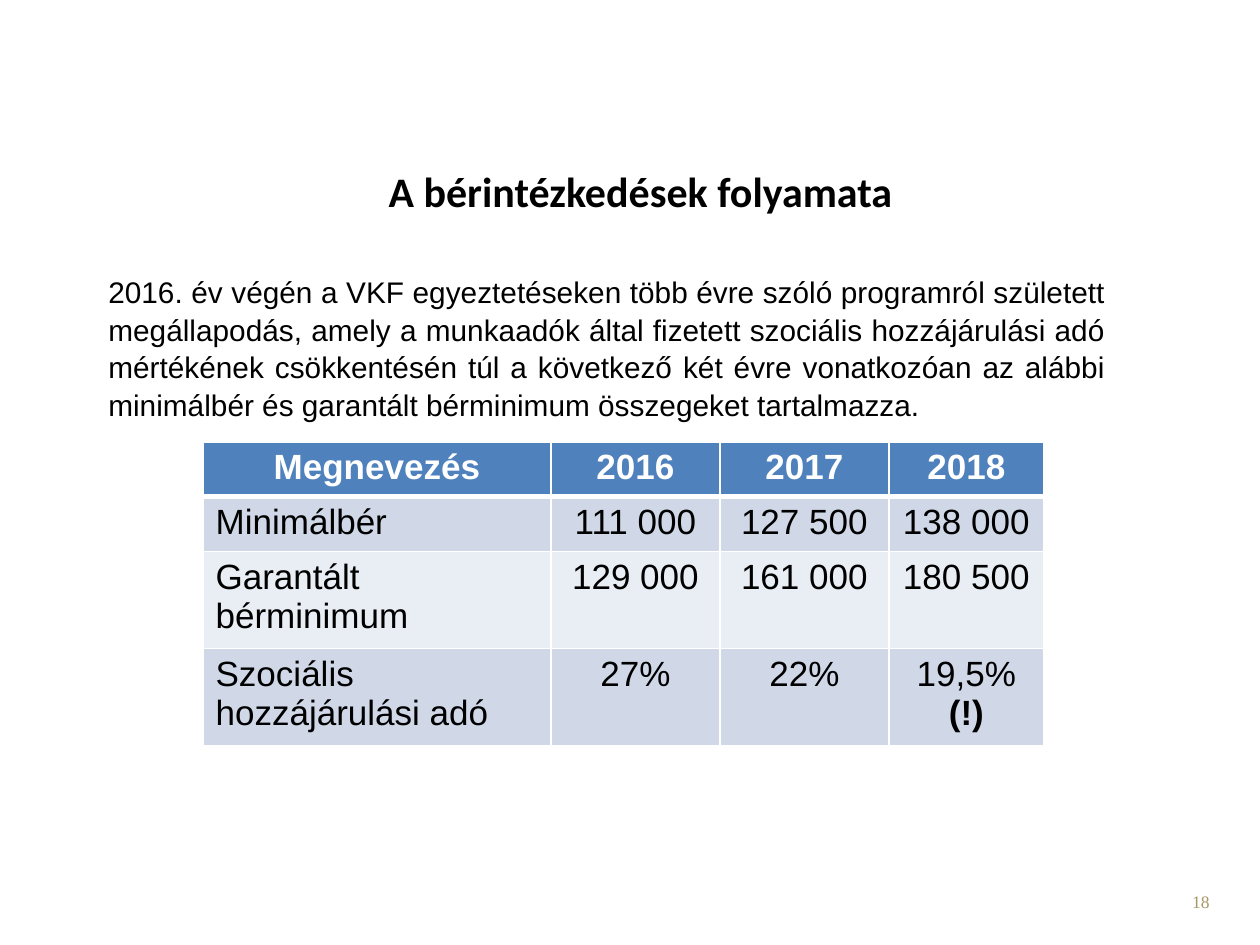
from dataclasses import dataclass

from lxml import etree
from pptx import Presentation
from pptx import util as u
from pptx.dml.color import RGBColor
from pptx.enum import text
from pptx.oxml import ns

EMU_PER_PX = 914400 / 126


@dataclass(frozen=True)
class Theme:
    ink: str = "000000"
    paper: str = "FFFFFF"
    header: str = "4F81BD"
    bands: tuple[str, str] = ("D0D8E8", "E9EDF4")
    number: str = "A69765"
    title_font: str = "Calibri"
    body_font: str = "Arial"
    number_font: str = "Times New Roman"
    title_size: int = 24
    body_size: int = 17
    table_size: int = 20
    number_size: int = 10


@dataclass(frozen=True)
class Style:
    font: str
    size: int
    color: str
    align: text.PP_ALIGN
    bold: bool = False


@dataclass(frozen=True)
class Box:
    left: int
    top: int
    width: int
    height: int

    def emu(self) -> tuple[u.Emu, ...]:
        return tuple(map(px, (self.left, self.top, self.width, self.height)))


@dataclass(frozen=True)
class WageRow:
    label: str
    values: tuple[str, str, str]
    height: int
    mark: str = ""


THEME = Theme()
ALIGN = text.PP_ALIGN
COLUMNS = (348, 169, 169, 155)
WAGE_ROWS = (
    WageRow("Megnevezés", ("2016", "2017", "2018"), 54),
    WageRow("Minimálbér", ("111 000", "127 500", "138 000"), 54),
    WageRow("Garantált bérminimum", ("129 000", "161 000", "180 500"), 97),
    WageRow("Szociális hozzájárulási adó", ("27%", "22%", "19,5% "), 97, "(!)"),
)
AGREEMENT = (
    "2016. év végén a VKF egyeztetéseken több évre szóló programról született "
    "megállapodás, amely a munkaadók által fizetett szociális hozzájárulási adó "
    "mértékének csökkentésén túl a következő két évre vonatkozóan az alábbi "
    "minimálbér és garantált bérminimum összegeket tartalmazza."
)


def px(length: int) -> u.Emu:
    return u.Emu(round(length * EMU_PER_PX))


def add_run(paragraph, wording: str, style: Style, bold: bool = False) -> None:
    paragraph.alignment = style.align
    run = paragraph.add_run()
    run.text = wording
    run.font.name = style.font
    run.font.size = u.Pt(style.size)
    run.font.bold = style.bold or bold
    run.font.color.rgb = RGBColor.from_string(style.color)


def add_note(slide, box: Box, wording: str, style: Style):
    frame = slide.shapes.add_textbox(*box.emu()).text_frame
    frame.word_wrap = True
    add_run(frame.paragraphs[0], wording, style)
    return frame.paragraphs[0]


def add_borders(cell, top: int, bottom: int) -> None:
    properties = cell._tc.get_or_add_tcPr()
    widths = {"a:lnL": 1, "a:lnR": 1, "a:lnT": top, "a:lnB": bottom}
    for position, (side, width) in enumerate(widths.items()):
        line = etree.Element(ns.qn(side), w=str(u.Pt(width)))
        fill = etree.SubElement(line, ns.qn("a:solidFill"))
        etree.SubElement(fill, ns.qn("a:srgbClr"), val=THEME.paper)
        properties.insert(position, line)


def add_wage_table(slide, left: int, top: int) -> None:
    box = Box(left, top, sum(COLUMNS), sum(row.height for row in WAGE_ROWS))
    table = slide.shapes.add_table(len(WAGE_ROWS), len(COLUMNS), *box.emu()).table
    for column, width in zip(table.columns, COLUMNS):
        column.width = px(width)
    for index, wage in enumerate(WAGE_ROWS):
        table.rows[index].height = px(wage.height)
        is_header = index == 0
        fill = THEME.header if is_header else THEME.bands[(index - 1) % 2]
        color = THEME.paper if is_header else THEME.ink
        for place, wording in enumerate((wage.label, *wage.values)):
            cell = table.cell(index, place)
            cell.fill.solid()
            cell.fill.fore_color.rgb = RGBColor.from_string(fill)
            add_borders(cell, 3 if index == 1 else 1, 3 if is_header else 1)
            align = ALIGN.CENTER if is_header or place else ALIGN.LEFT
            style = Style(THEME.body_font, THEME.table_size, color, align, is_header)
            paragraph = cell.text_frame.paragraphs[0]
            add_run(paragraph, wording, style)
            if wage.mark and place == len(COLUMNS) - 1:
                add_run(paragraph, wage.mark, style, bold=True)


def add_title(slide, box: Box, wording: str) -> None:
    title = slide.shapes.title
    title.left, title.top, title.width, title.height = box.emu()
    frame = title.text_frame
    frame.vertical_anchor = text.MSO_ANCHOR.TOP
    frame.margin_top = 0
    style = Style(THEME.title_font, THEME.title_size, THEME.ink, ALIGN.CENTER, True)
    add_run(frame.paragraphs[0], wording, style)


def main() -> None:
    deck = Presentation()
    deck.slide_width, deck.slide_height = px(1260), px(945)
    slide = deck.slides.add_slide(deck.slide_layouts[5])
    add_title(slide, Box(105, 165, 1071, 100), "A bérintézkedések folyamata")
    agreement = add_note(
        slide, Box(96, 266, 1022, 157), AGREEMENT,
        Style(THEME.body_font, THEME.body_size, THEME.ink, ALIGN.JUSTIFY),
    )
    agreement.line_spacing = 1.05
    add_wage_table(slide, 203, 442)
    add_note(
        slide, Box(929, 885, 293, 50), "18",
        Style(THEME.number_font, THEME.number_size, THEME.number, ALIGN.RIGHT),
    )
    deck.save("out.pptx")


if __name__ == "__main__":
    main()
